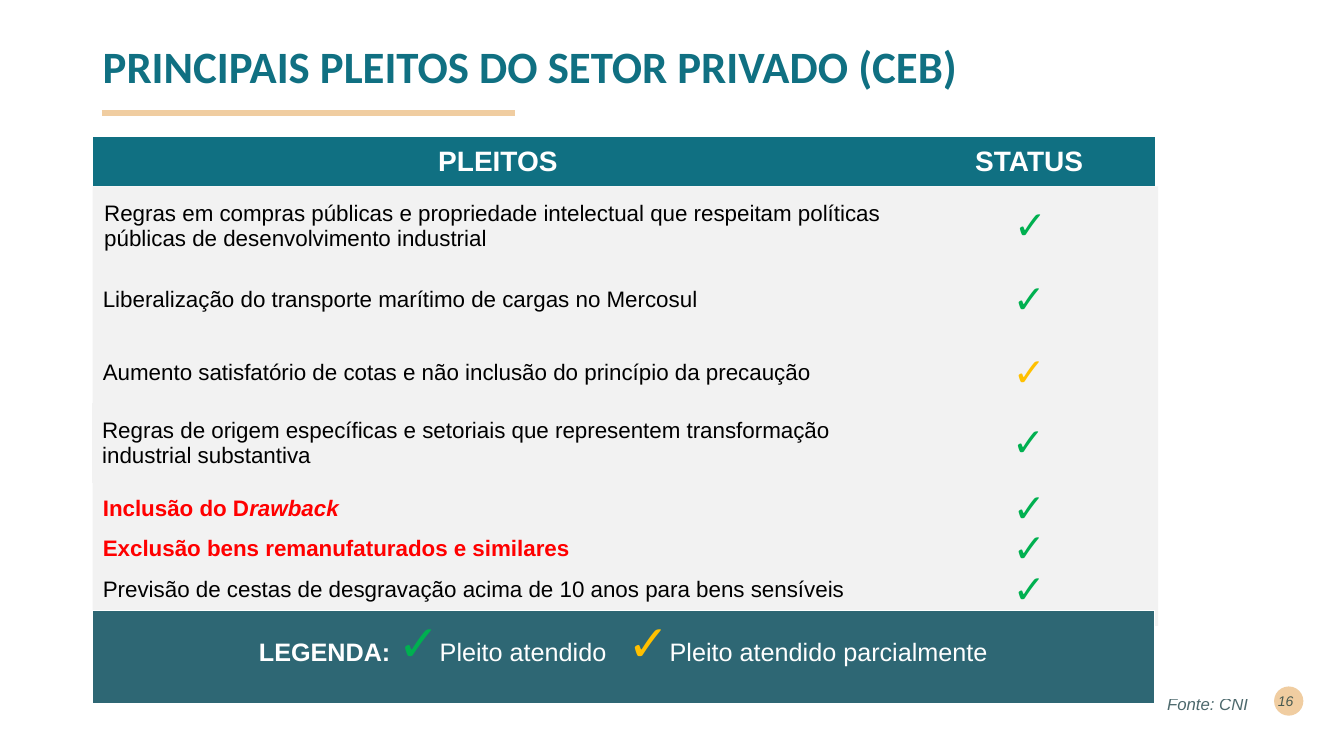
"""Build the slide on the private sector's requests and their status."""
from dataclasses import dataclass

from lxml import etree
from pptx import Presentation
from pptx.dml.color import RGBColor
from pptx.enum.shapes import MSO_CONNECTOR, MSO_SHAPE
from pptx.enum.text import MSO_ANCHOR, PP_ALIGN
from pptx.oxml.ns import qn
from pptx.util import Inches, Pt

LINE = MSO_CONNECTOR.STRAIGHT
RECT, OVAL = MSO_SHAPE.RECTANGLE, MSO_SHAPE.OVAL
TOP, MIDDLE = MSO_ANCHOR.TOP, MSO_ANCHOR.MIDDLE
LEFT, CENTER, RIGHT = PP_ALIGN.LEFT, PP_ALIGN.CENTER, PP_ALIGN.RIGHT

WIDTH, HEIGHT = Inches(13.333), Inches(7.5)
TEAL, SLATE, SAND, PALE = "107082", "2E6774", "F0CDA1", "F2F2F2"
WHITE, BLACK, RED, INK = "FFFFFF", "000000", "FF0000", "00292E"
GREEN, AMBER = "00B050", "FFC000"
EDGE = 6.9
COLS = (60.3, 18.75)


@dataclass(frozen=True)
class Span:
    text: str
    size: float
    color: str
    bold: bool = False
    italic: bool = False
    font: str = "Arial"


@dataclass(frozen=True)
class Box:
    left: float
    top: float
    width: float
    height: float


@dataclass(frozen=True)
class Band:
    top: float
    height: float
    cells: tuple
    fill: str = PALE
    left: float = EDGE
    cols: tuple = COLS
    aligns: tuple = (LEFT, CENTER)
    anchor: MSO_ANCHOR = MIDDLE
    lined: bool = False


@dataclass(frozen=True)
class Note:
    box: Box
    span: Span
    align: PP_ALIGN = LEFT
    anchor: MSO_ANCHOR = MIDDLE
    before: float = 0
    lines: float = 1.0
    alpha: int = 100


def across(share: float) -> int:
    return round(WIDTH * share / 100)


def down(share: float) -> int:
    return round(HEIGHT * share / 100)


def place(box: Box) -> tuple:
    return across(box.left), down(box.top), across(box.width), down(box.height)


def tint(value: str) -> RGBColor:
    return RGBColor.from_string(value)


def write(para, spans: tuple) -> None:
    for span in spans:
        run = para.add_run()
        run.text = span.text
        font = run.font
        font.name, font.size = span.font, Pt(span.size)
        font.bold, font.italic = span.bold, span.italic
        font.color.rgb = tint(span.color)


def block(slide, kind: MSO_SHAPE, box: Box, fill: str) -> None:
    shape = slide.shapes.add_shape(kind, *place(box))
    shape.shadow.inherit = False
    shape.fill.solid()
    shape.fill.fore_color.rgb = tint(fill)
    shape.line.fill.background()


def rule(slide, start: float, end: float, top: float) -> None:
    line = slide.shapes.add_connector(LINE, across(start), down(top), across(end), down(top))
    line.line.color.rgb = tint(SAND)
    line.line.width = Pt(4.32)
    etree.SubElement(line._element.spPr, qn("a:effectLst"))


def label(slide, note: Note) -> None:
    frame = slide.shapes.add_textbox(*place(note.box)).text_frame
    frame.word_wrap = True
    frame.vertical_anchor = note.anchor
    para = frame.paragraphs[0]
    para.alignment = note.align
    para.space_before, para.line_spacing = Pt(note.before), note.lines
    write(para, (note.span,))
    if note.alpha < 100:
        for color in para._p.iter(qn("a:srgbClr")):
            etree.SubElement(color, qn("a:alpha")).set("val", str(note.alpha * 1000))


def unline(cell) -> None:
    props = cell._tc.get_or_add_tcPr()
    for index, side in enumerate(("lnL", "lnR", "lnT", "lnB")):
        edge = etree.Element(qn(f"a:{side}"))
        etree.SubElement(edge, qn("a:noFill"))
        props.insert(index, edge)


def strip(slide, band: Band) -> None:
    box = Box(band.left, band.top, sum(band.cols), band.height)
    table = slide.shapes.add_table(1, len(band.cols), *place(box)).table
    table.horz_banding = False
    table.first_row = band.lined
    for index, spans in enumerate(band.cells):
        table.columns[index].width = across(band.cols[index])
        cell = table.cell(0, index)
        cell.fill.solid()
        cell.fill.fore_color.rgb = tint(band.fill)
        cell.vertical_anchor = band.anchor
        para = cell.text_frame.paragraphs[0]
        para.alignment = band.aligns[index]
        write(para, spans)
        if not band.lined:
            unline(cell)


def tick(color: str, bold: bool = True, size: float = 28) -> Span:
    return Span("✓", size, color, bold)


def plea(top: float, height: float, text: str, mark: str = GREEN, left: float = EDGE) -> Band:
    return Band(top, height, ((Span(text, 16, BLACK),), (tick(mark),)), left=left)


def alert(top: float, *spans: Span) -> Band:
    return Band(top, 5.47, (spans, (tick(GREEN),)))


BANDS = (
    Band(18.13, 6.53, ((Span("PLEITOS", 20, WHITE, True),), (Span("STATUS", 20, WHITE, True),)),
         TEAL, aligns=(CENTER, CENTER)),
    plea(24.67, 10.53, "Regras em compras públicas e propriedade intelectual que respeitam "
         "políticas públicas de desenvolvimento industrial", left=7),
    plea(35.2, 8.93, "Liberalização do transporte marítimo de cargas no Mercosul"),
    plea(44.13, 10.4, "Aumento satisfatório de cotas e não inclusão do princípio da precaução",
         AMBER),
    plea(53.33, 10.53, "Regras de origem específicas e setoriais que representem "
         "transformação industrial substantiva", left=6.85),
    alert(63.47, Span("Inclusão do D", 16, RED, True), Span("rawback", 16, RED, True, True)),
    alert(68.8, Span("Exclusão bens remanufaturados e similares", 16, RED, True)),
    plea(74.27, 5.47, "Previsão de cestas de desgravação acima de 10 anos para bens sensíveis"),
    Band(80.8, 12.27, ((
        Span("LEGENDA: ", 18, WHITE, True), tick(GREEN, size=36),
        Span("Pleito atendido   ", 18, WHITE), tick(AMBER, size=36),
        Span("Pleito atendido parcialmente", 18, WHITE)),),
        SLATE, 6.85, (sum(COLS),), (CENTER,), TOP, True),
)

NOTES = (
    Note(Box(94.05, 90, 2.93, 5.33), Span("16", 10, INK, italic=True), RIGHT, alpha=70),
    Note(Box(86.1, 90.4, 8.25, 5.47), Span("Fonte: CNI", 12, INK, italic=True),
         before=5.1, alpha=70),
    Note(Box(EDGE, 5.33, 86.25, 19.33),
         Span("PRINCIPAIS PLEITOS DO SETOR PRIVADO (CEB)", 32, TEAL, True, font="Calibri"),
         anchor=TOP, lines=0.9),
)


def main() -> None:
    deck = Presentation()
    deck.slide_width, deck.slide_height = WIDTH, HEIGHT
    slide = deck.slides.add_slide(deck.slide_layouts[6])
    block(slide, OVAL, Box(94.8, 90.8, 2.18, 3.87), SAND)
    block(slide, RECT, Box(EDGE, 24.67, 79.28, 58.13), PALE)
    for note in NOTES:
        label(slide, note)
    rule(slide, 7.58, 38.33, 14.93)
    for band in BANDS:
        strip(slide, band)
    deck.save("out.pptx")


if __name__ == "__main__":
    main()
